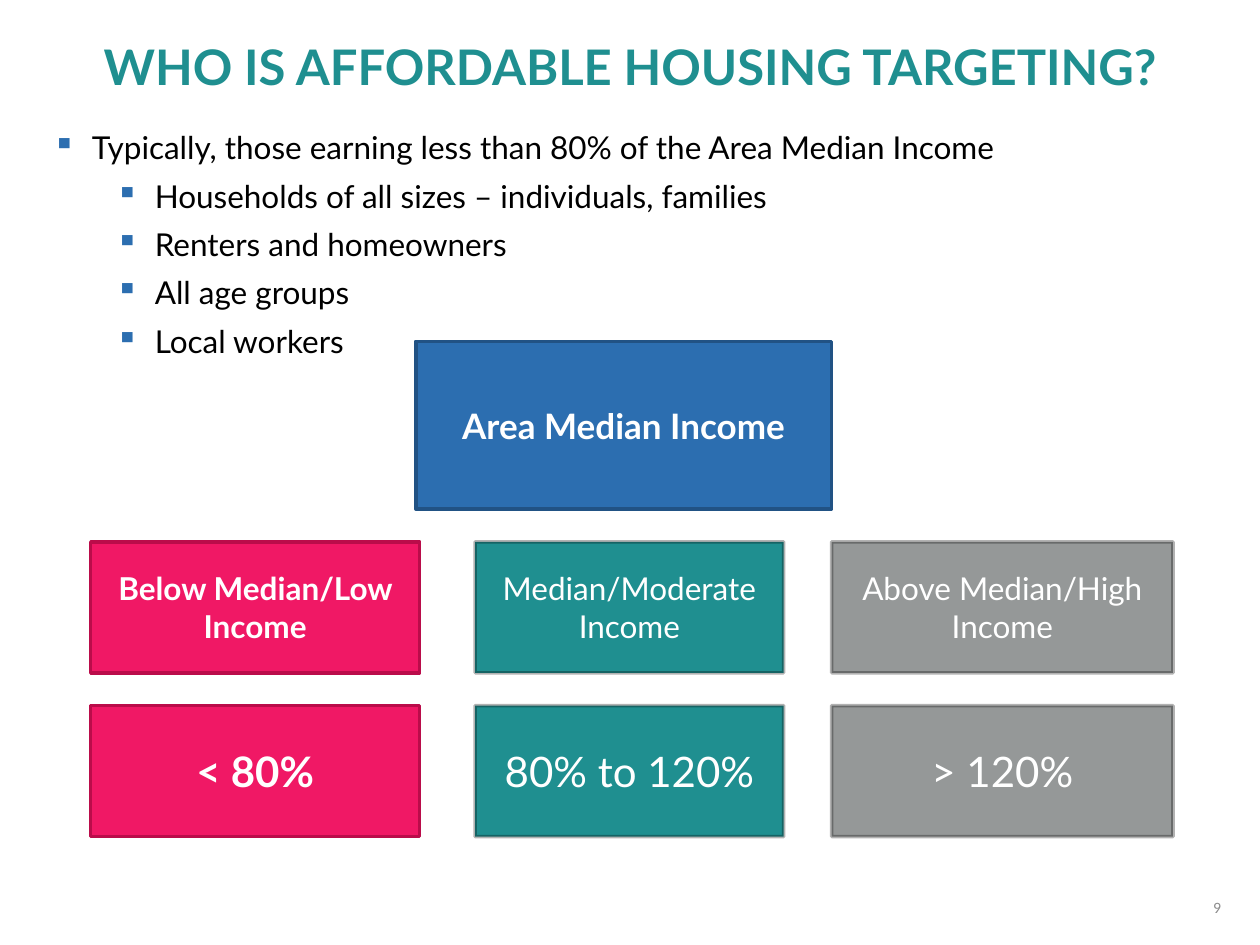
from lxml.etree import SubElement
from pptx import Presentation
from pptx.dml.color import RGBColor
from pptx.enum.shapes import MSO_SHAPE
from pptx.enum.text import MSO_ANCHOR, MSO_AUTO_SIZE, PP_ALIGN
from pptx.oxml.ns import qn
from pptx.util import Inches, Pt

WIDTH, HEIGHT = 10, 7.5
BLUE, TEAL, PINK, GRAY = "2C6EB0", "1F8F90", "F01865", "959898"
WHITE, BLACK = "FFFFFF", "000000"
BAND_HEIGHT, BAND_TOP, RANGE_TOP = 1.04, 4.3, 5.6
BANDS = [
    (0.72, 2.61, PINK, "BA0C4A", 100, True, "Below Median/Low Income", "< 80%"),
    (3.77, 2.45, TEAL, BLACK, 30, False, "Median/Moderate Income", "80% to 120%"),
    (6.6, 2.71, GRAY, BLACK, 30, False, "Above Median/High Income", "> 120%"),
]
AUDIENCE = [
    (0, "Typically, those earning less than 80% of the Area Median Income"),
    (1, "Households of all sizes – individuals, families"),
    (1, "Renters and homeowners"),
    (1, "All age groups"),
    (1, "Local workers"),
]


def color(hex_code):
    return RGBColor.from_string(hex_code)


def style(paragraph, size, hex_code, bold=False, font="Lato"):
    for run in paragraph.runs:
        run.font.name = font
        run.font.size = Pt(size)
        run.font.bold = bold
        run.font.color.rgb = color(hex_code)


def add_text(slide, box, text, size, hex_code, align, bold=False, font="Lato"):
    label = slide.shapes.add_textbox(*map(Inches, box))
    frame = label.text_frame
    frame.word_wrap = True
    frame.text = text
    paragraph = frame.paragraphs[0]
    paragraph.alignment = align
    style(paragraph, size, hex_code, bold, font)
    return frame


def add_bullet(paragraph, level):
    paragraph.level = level
    properties = paragraph._p.get_or_add_pPr()
    properties.set("marL", str(Inches(0.31 + level * 0.5)))
    properties.set("indent", str(Inches(-0.31)))
    bullet_color = SubElement(properties, qn("a:buClr"))
    SubElement(bullet_color, qn("a:srgbClr"), val=BLUE)
    SubElement(properties, qn("a:buChar"), char="▪")


def add_audience(slide, box):
    frame = slide.shapes.add_textbox(*map(Inches, box)).text_frame
    frame.word_wrap = True
    frame.auto_size = MSO_AUTO_SIZE.SHAPE_TO_FIT_TEXT
    frame.text = "\n".join(text for _, text in AUDIENCE)
    for index, (level, _) in enumerate(AUDIENCE):
        paragraph = frame.paragraphs[index]
        add_bullet(paragraph, level)
        if index:
            paragraph.space_before = Pt(6)
        style(paragraph, 18, BLACK)


def add_block(slide, box, text, size, fill, border, opacity=100, bold=True):
    block = slide.shapes.add_shape(MSO_SHAPE.RECTANGLE, *map(Inches, box))
    block.shadow.inherit = False
    block.fill.solid()
    block.fill.fore_color.rgb = color(fill)
    block.line.color.rgb = color(border)
    block.line.width = Pt(2)
    if opacity < 100:
        border_color = block.line._ln.find(".//" + qn("a:srgbClr"))
        SubElement(border_color, qn("a:alpha"), val=str(opacity * 1000))
    frame = block.text_frame
    frame.word_wrap = True
    frame.vertical_anchor = MSO_ANCHOR.MIDDLE
    frame.text = text
    frame.paragraphs[0].alignment = PP_ALIGN.CENTER
    style(frame.paragraphs[0], size, WHITE, bold)


def main():
    deck = Presentation()
    deck.slide_width, deck.slide_height = Inches(WIDTH), Inches(HEIGHT)
    slide = deck.slides.add_slide(deck.slide_layouts[6])

    title = add_text(slide, (0, 0.24, WIDTH, 0.57),
                     "WHO IS AFFORDABLE HOUSING TARGETING?",
                     28, TEAL, PP_ALIGN.CENTER, bold=True)
    title.auto_size = MSO_AUTO_SIZE.SHAPE_TO_FIT_TEXT
    page_number = add_text(slide, (7.56, 7, 2.23, 0.4), "9", 9, "8C8C8C",
                           PP_ALIGN.RIGHT, font="Calibri")
    page_number.vertical_anchor = MSO_ANCHOR.MIDDLE

    for left, width, fill, border, opacity, bold, income, share in BANDS:
        for top, text, size in ((BAND_TOP, income, 18), (RANGE_TOP, share, 24)):
            add_block(slide, (left, top, width, BAND_HEIGHT), text, size,
                      fill, border, opacity, bold)

    add_audience(slide, (0.32, 0.97, 8.79, 1.95))
    add_block(slide, (WIDTH * 0.33, 2.71, WIDTH * 0.33, 1.33),
              "Area Median Income", 20, BLUE, "215284")
    deck.save("out.pptx")


if __name__ == "__main__":
    main()
